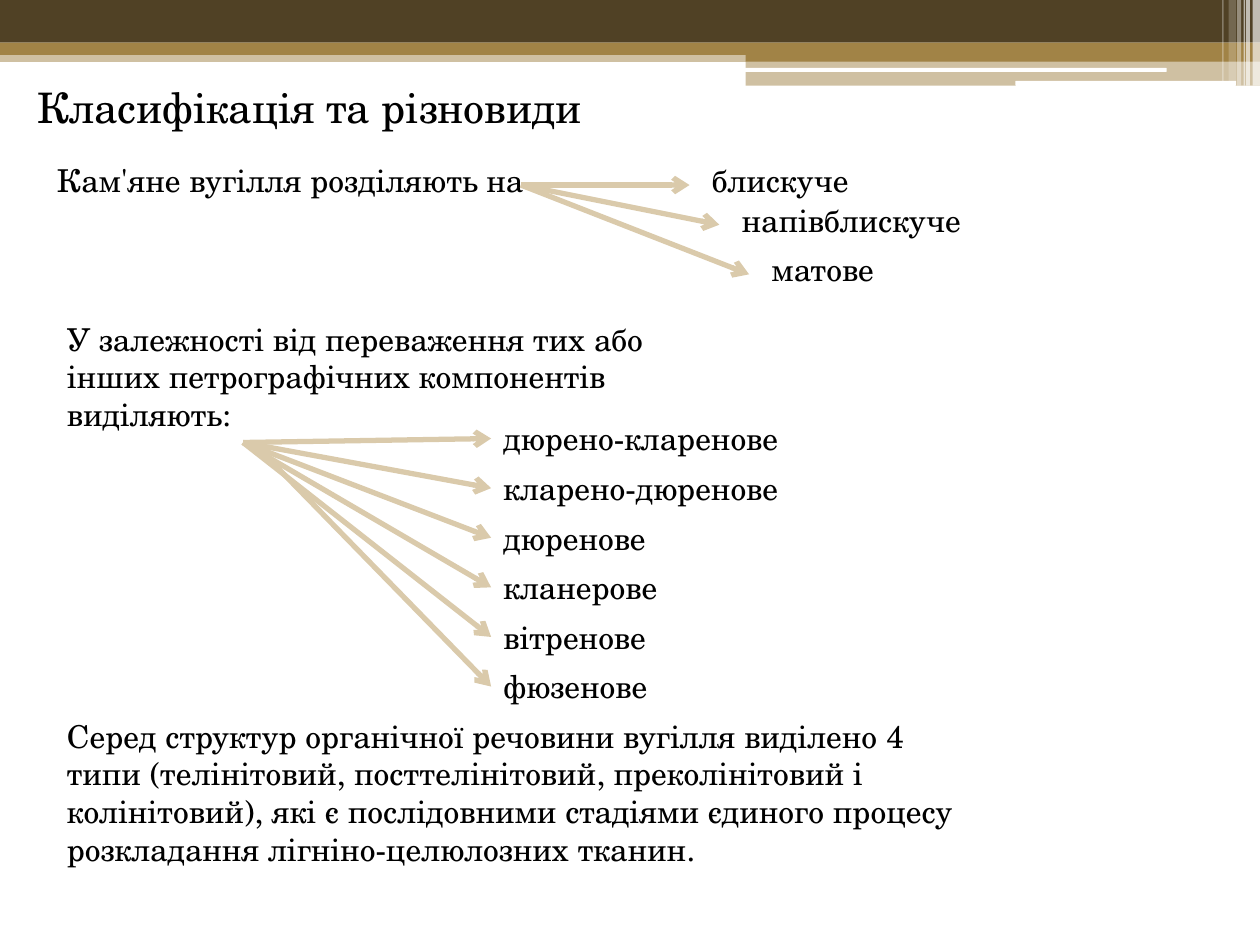
from lxml.etree import SubElement
from pptx import Presentation
from pptx.dml.color import RGBColor
from pptx.enum.shapes import MSO_CONNECTOR as LINE, MSO_SHAPE as SHAPE
from pptx.enum.text import MSO_AUTO_SIZE as AUTO_SIZE
from pptx.oxml.ns import qn
from pptx.util import Cm, Pt

FONT = "TeX Gyre Schola"
BLACK, WHITE = "000000", "FFFFFF"
BROWN, GOLD, SAND = "504125", "A18346", "DACAAB"
ROW_HEIGHT = 1.02

# left, top, width, height, colour, opacity in percent
BANDS = [
    (0, 1.02, 25.4, 0.23, GOLD, 50),
    (0, 0, 25.4, 0.86, BROWN, 100),
    (0, 0.86, 25.4, 0.25, GOLD, 100),
    (15.03, 0.99, 10.37, 0.25, GOLD, 100),
    (15.03, 1.23, 10.37, 0.5, GOLD, 50),
]
HIGHLIGHTS = [(15.01, 1.37, 8.51, 0.08), (20.47, 1.63, 4.45, 0.1)]
# left, width, height, opacity in percent
STRIPES = [
    (25.25, 0.15, 1.73, 65),
    (25.12, 0.08, 1.73, 65),
    (25.07, 0.03, 1.73, 60),
    (24.94, 0.08, 1.73, 40),
    (24.77, 0.15, 1.63, 20),
    (24.64, 0.03, 1.63, 30),
]

# name, left, top, width
LUSTRE_TYPES = [
    ("блискуче", 14.1, 3.12, 6.6),
    ("напівблискуче", 14.7, 3.92, 6.2),
    ("матове", 15.3, 4.92, 5.2),
]
# name, width
PETROGRAPHIC_TYPES = [
    ("дюрено-кларенове", 8.8),
    ("кларено-дюренове", 10),
    ("дюренове", 8.6),
    ("кланерове", 6.6),
    ("вітренове", 8),
    ("фюзенове", 8.2),
]


def color(hex_code):
    return RGBColor.from_string(hex_code)


def add_bar(slide, left, top, width, height, fill, opacity=100, kind=SHAPE.RECTANGLE):
    bar = slide.shapes.add_shape(kind, Cm(left), Cm(top), Cm(width), Cm(height))
    bar.shadow.inherit = False
    bar.line.fill.background()
    bar.fill.solid()
    bar.fill.fore_color.rgb = color(fill)
    if opacity < 100:
        rgb = bar.fill._xPr.find(qn("a:solidFill")).find(qn("a:srgbClr"))
        SubElement(rgb, qn("a:alpha"), val=str(opacity * 1000))


def add_text(slide, text, left, top, width, height=ROW_HEIGHT, size=18):
    box = slide.shapes.add_textbox(Cm(left), Cm(top), Cm(width), Cm(height))
    frame = box.text_frame
    frame.word_wrap = True
    frame.auto_size = AUTO_SIZE.SHAPE_TO_FIT_TEXT
    paragraph = frame.paragraphs[0]
    paragraph.text = text
    paragraph.font.name = FONT
    paragraph.font.size = Pt(size)
    paragraph.font.color.rgb = color(BLACK)
    return box


def add_arrow(slide, start, end):
    arrow = slide.shapes.add_connector(LINE.STRAIGHT, *map(Cm, start + end))
    arrow.line.color.rgb = color(SAND)
    arrow.line.width = Pt(3)
    SubElement(arrow.line._get_or_add_ln(), qn("a:tailEnd"), type="arrow")
    SubElement(arrow._element.spPr, qn("a:effectLst"))
    return arrow


def add_header(slide):
    for band in BANDS:
        add_bar(slide, *band)
    for highlight in HIGHLIGHTS:
        add_bar(slide, *highlight, WHITE, kind=SHAPE.ROUNDED_RECTANGLE)
    for left, width, height, opacity in STRIPES:
        add_bar(slide, left, 0, width, height, WHITE, opacity)


def add_lustre_types(slide):
    add_text(slide, "Кам'яне вугілля розділяють на", 0.9, 3.12, 12)
    for name, left, top, width in LUSTRE_TYPES:
        add_arrow(slide, (10.5, 3.73), (left - 0.2, top + 0.61))
        add_text(slide, name, left, top, width)


def add_petrographic_types(slide):
    add_text(slide, "У залежності від переваження тих або інших петрографічних "
             "компонентів виділяють:", 1.1, 6.32, 13.4, 2.56)
    left, first_top, step = 9.9, 8.33, 1
    last = len(PETROGRAPHIC_TYPES) - 1
    for row, (name, width) in enumerate(PETROGRAPHIC_TYPES):
        top = first_top + row * step
        start = (5.1 if row == last else 4.9, 8.92)
        arrow = add_arrow(slide, start, (left, top + ROW_HEIGHT / 2))
        label = add_text(slide, name, left, top, width)
        arrow.end_connect(label, 1)


def main():
    prs = Presentation()
    prs.slide_width, prs.slide_height = Cm(25.4), Cm(19.05)
    slide = prs.slides.add_slide(prs.slide_layouts[6])

    # Header decoration and title
    add_header(slide)
    add_text(slide, "Класифікація та різновиди", 0.5, 1.52, 21, 1.28, size=24)

    # Two branching classifications
    add_lustre_types(slide)
    add_petrographic_types(slide)

    # Closing paragraph
    add_text(slide, "Серед структур органічної речовини вугілля виділено 4 типи "
             "(телінітовий, посттелінітовий, преколінітовий і колінітовий), які є "
             "послідовними стадіями єдиного процесу "
             "розкладання лігніно-целюлозних тканин.", 1.1, 14.32, 18.6, 3.33)

    prs.save("out.pptx")


if __name__ == "__main__":
    main()
